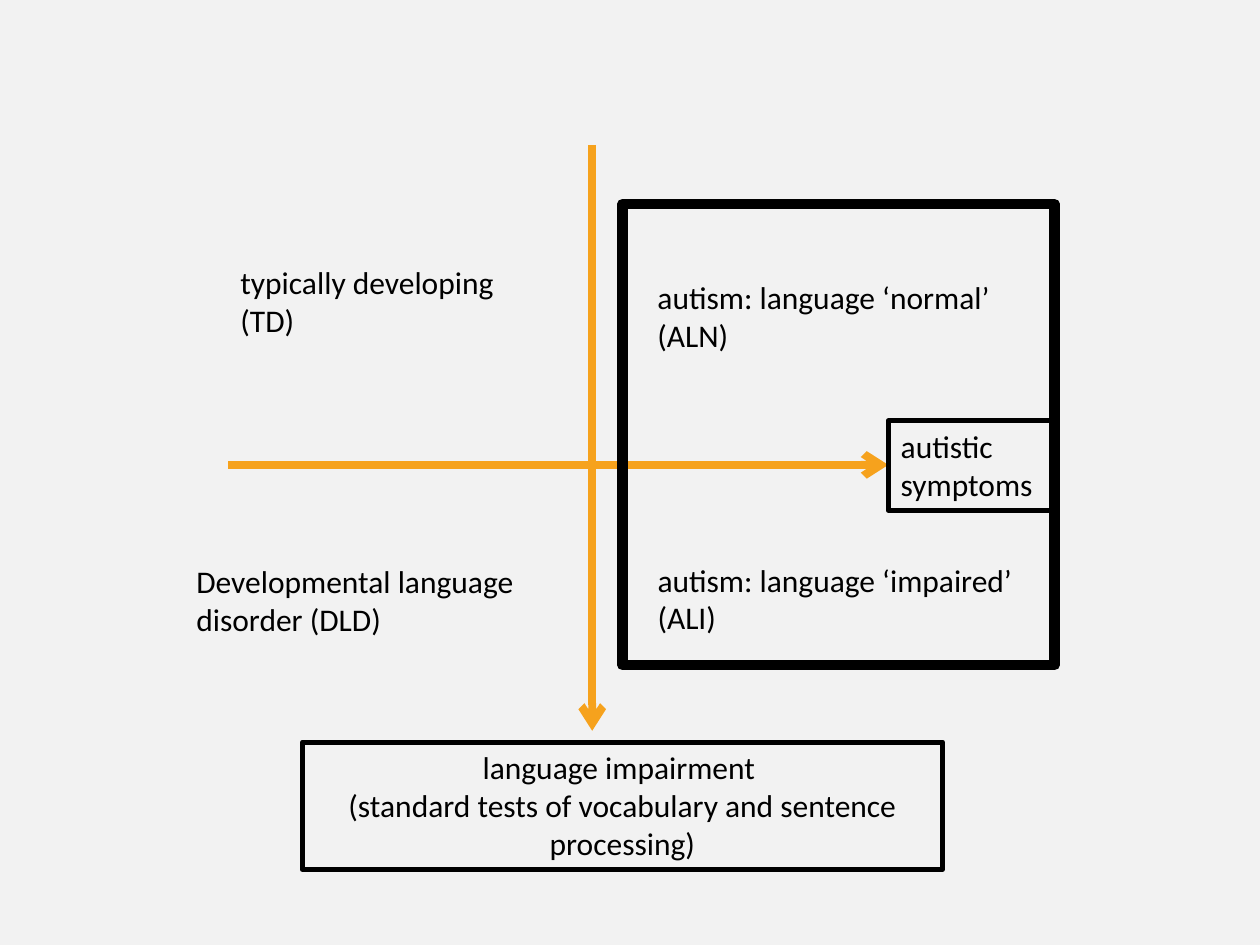
from collections import namedtuple

from lxml import etree
from pptx import Presentation, util as u
from pptx.dml.color import RGBColor
from pptx.enum import shapes, text
from pptx.oxml import ns

BLACK = RGBColor(0x00, 0x00, 0x00)
ORANGE = RGBColor(0xF6, 0xA2, 0x1D)
PALE_GRAY = RGBColor(0xF2, 0xF2, 0xF2)
COLUMNS, ROWS = 100, 75
CELL = u.Inches(0.1)
LABEL_HEIGHT = 7.1

Box = namedtuple("Box", "left top width height")


def grid(*lengths):
    return [round(length * CELL) for length in lengths]


def inside(box, left, top, width, height):
    return Box(box.left + left, box.top + top, width, height)


def write(frame, content, size=18, align=text.PP_ALIGN.LEFT,
          anchor=text.MSO_ANCHOR.TOP, color=BLACK, font="Calibri"):
    frame.word_wrap = True
    frame.vertical_anchor = anchor
    for index, line in enumerate(content.split("\n")):
        para = frame.paragraphs[0] if index == 0 else frame.add_paragraph()
        para.alignment = align
        span = para.add_run()
        span.text = line
        span.font.name = font
        span.font.size = u.Pt(size)
        span.font.color.rgb = color


def add_label(page, box, content):
    label = page.shapes.add_textbox(*grid(*box))
    write(label.text_frame, content)


def add_outline(page, box, weight):
    outline = page.shapes.add_shape(shapes.MSO_SHAPE.RECTANGLE, *grid(*box))
    outline.shadow.inherit = False
    outline.fill.background()
    outline.line.color.rgb = BLACK
    outline.line.width = u.Pt(weight)
    return outline


def add_arrow(page, start, end):
    arrow = page.shapes.add_connector(
        shapes.MSO_CONNECTOR.STRAIGHT, *grid(*start, *end))
    arrow.line.color.rgb = ORANGE
    arrow.line.width = u.Pt(4.5)
    line = arrow.line._get_or_add_ln()
    etree.SubElement(line, ns.qn("a:tailEnd"), type="arrow")
    etree.SubElement(arrow._element.spPr, ns.qn("a:effectLst"))


def draw_axes(page, box):
    across = box.top + 25.4
    down = box.left + 28.9
    add_arrow(page, (box.left, across), (box.left + box.width, across))
    add_arrow(page, (down, box.top), (down, box.top + box.height))


def draw_axis_title(page, box, content, **style):
    title = add_outline(page, box, 3)
    write(title.text_frame, content, **style)


def draw_non_autistic_groups(page, box):
    add_label(page, inside(box, 3.5, 0, 24.2, LABEL_HEIGHT),
              "typically developing (TD)")
    add_label(page, inside(box, 0, 23.7, box.width, LABEL_HEIGHT),
              "Developmental language disorder (DLD)")


def draw_autistic_groups(page, box):
    add_label(page, inside(box, 1.8, 5.4, 28.6, LABEL_HEIGHT),
              "autism: language ‘normal’ (ALN)")
    add_label(page, inside(box, 1.8, 27.8, 32.5, LABEL_HEIGHT),
              "autism: language ‘impaired’ (ALI)")
    add_outline(page, box, 6)


def main():
    deck = Presentation()
    deck.slide_width, deck.slide_height = grid(COLUMNS, ROWS)
    page = deck.slides.add_slide(deck.slide_layouts[6])
    page.background.fill.solid()
    page.background.fill.fore_color.rgb = PALE_GRAY

    draw_axes(page, Box(18.1, 11.5, 52.4, 46.5))
    draw_axis_title(page, Box(70.5, 33.4, 13.2, LABEL_HEIGHT),
                    "autistic symptoms")
    draw_axis_title(
        page, Box(24, 58.9, 50.8, 10.1),
        "language impairment \n"
        "(standard tests of vocabulary and sentence processing)",
        align=text.PP_ALIGN.CENTER)
    draw_non_autistic_groups(page, Box(14.6, 20.4, 32.5, 30.8))
    draw_autistic_groups(page, Box(49.4, 16.2, 34.3, 36.6))
    deck.save("out.pptx")


if __name__ == "__main__":
    main()
